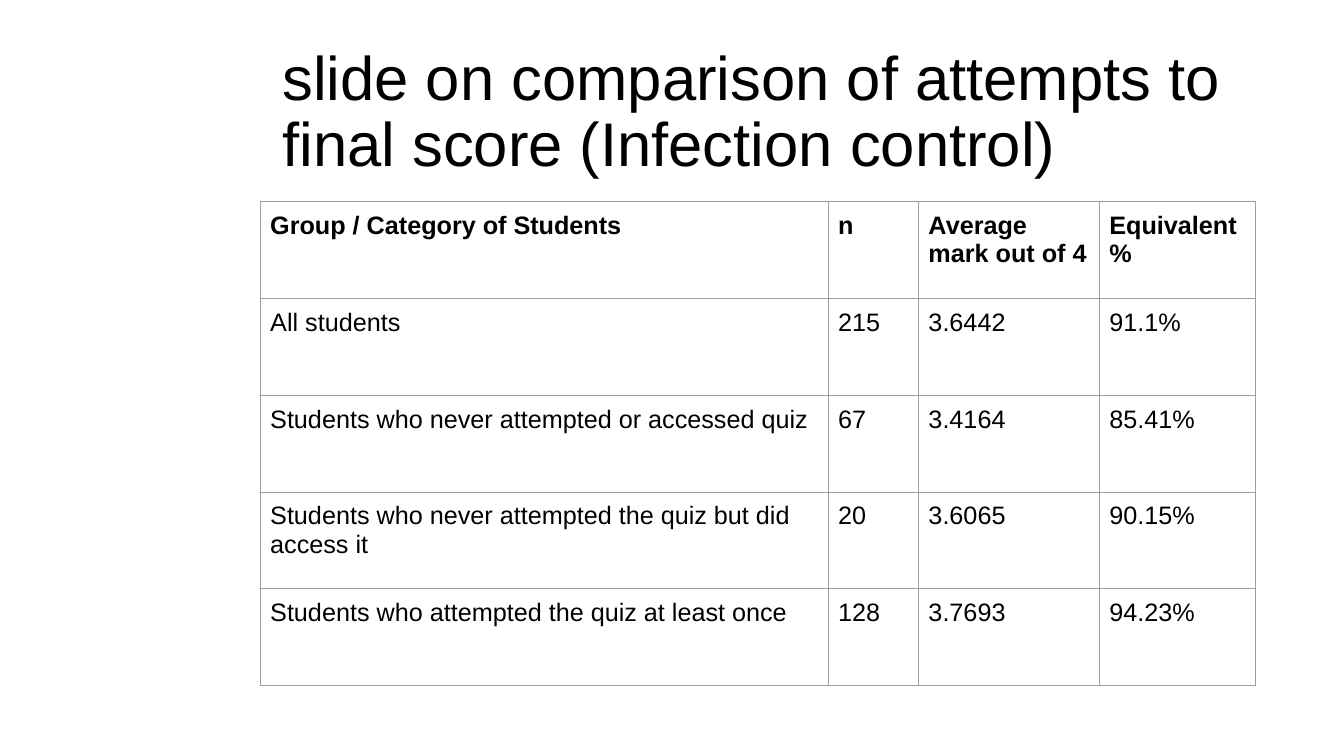
from dataclasses import astuple, dataclass

from lxml.etree import SubElement
from pptx import Presentation
from pptx.dml.color import RGBColor
from pptx.enum.text import MSO_ANCHOR, MSO_AUTO_SIZE, PP_ALIGN
from pptx.oxml.ns import qn
from pptx.slide import Slide
from pptx.table import _Cell as Cell
from pptx.util import Cm, Pt

BLACK = RGBColor(0x00, 0x00, 0x00)
BORDER_GRAY = RGBColor(0x9E, 0x9E, 0x9E)
FONT_NAME = "Arial"
COLUMN_WIDTHS = (Cm(14.31), Cm(2.28), Cm(4.56), Cm(3.94))
ROW_HEIGHT = Cm(2.44)
CELL_MARGIN = Cm(0.25)


@dataclass(frozen=True)
class ScoreRow:
    group: str
    count: str
    average: str
    percent: str


SCORE_ROWS = (
    ScoreRow("Group / Category of Students", "n", "Average mark out of 4", "Equivalent %"),
    ScoreRow("All students", "215", "3.6442", "91.1%"),
    ScoreRow("Students who never attempted or accessed quiz", "67", "3.4164", "85.41%"),
    ScoreRow("Students who never attempted the quiz but did access it", "20", "3.6065", "90.15%"),
    ScoreRow("Students who attempted the quiz at least once", "128", "3.7693", "94.23%"),
)


def format_font(paragraph, size: int, bold: bool = False) -> None:
    font = paragraph.font
    font.name = FONT_NAME
    font.size = Pt(size)
    font.bold = bold
    font.color.rgb = BLACK


def add_title(slide: Slide, text: str) -> None:
    title = slide.shapes.title
    title.left, title.top, title.width, title.height = Cm(6.86), Cm(1.02), Cm(25.07), Cm(3.68)
    frame = title.text_frame
    frame.text = text
    frame.word_wrap = True
    frame.auto_size = MSO_AUTO_SIZE.NONE
    frame.vertical_anchor = MSO_ANCHOR.MIDDLE
    paragraph = frame.paragraphs[0]
    paragraph.alignment = PP_ALIGN.LEFT
    paragraph.line_spacing = 0.9
    format_font(paragraph, 44)


def add_borders(cell: Cell) -> None:
    properties = cell._tc.get_or_add_tcPr()
    for side in ("a:lnL", "a:lnR", "a:lnT", "a:lnB"):
        line = SubElement(properties, qn(side), w=str(Pt(0.75)))
        fill = SubElement(line, qn("a:solidFill"))
        SubElement(fill, qn("a:srgbClr"), val=str(BORDER_GRAY))


def fill_cell(cell: Cell, text: str, bold: bool) -> None:
    cell.text = text
    cell.margin_left = cell.margin_right = CELL_MARGIN
    cell.margin_top = cell.margin_bottom = CELL_MARGIN
    add_borders(cell)
    cell.fill.background()
    format_font(cell.text_frame.paragraphs[0], 18, bold)


def add_score_table(slide: Slide, score_rows: tuple[ScoreRow, ...]) -> None:
    table = slide.shapes.add_table(
        len(score_rows), len(COLUMN_WIDTHS), Cm(6.56), Cm(5.08),
        sum(COLUMN_WIDTHS), ROW_HEIGHT * len(score_rows),
    ).table
    table.horz_banding = False
    for column, width in zip(table.columns, COLUMN_WIDTHS):
        column.width = width
    for row_index, (row, score_row) in enumerate(zip(table.rows, score_rows)):
        row.height = ROW_HEIGHT
        for cell, text in zip(row.cells, astuple(score_row)):
            fill_cell(cell, text, bold=row_index == 0)


def main() -> None:
    presentation = Presentation()
    presentation.slide_width = Cm(33.87)
    presentation.slide_height = Cm(19.05)
    slide = presentation.slides.add_slide(presentation.slide_layouts[5])
    add_title(slide, "slide on comparison of attempts to final score (Infection control)")
    add_score_table(slide, SCORE_ROWS)
    presentation.save("out.pptx")


if __name__ == "__main__":
    main()
